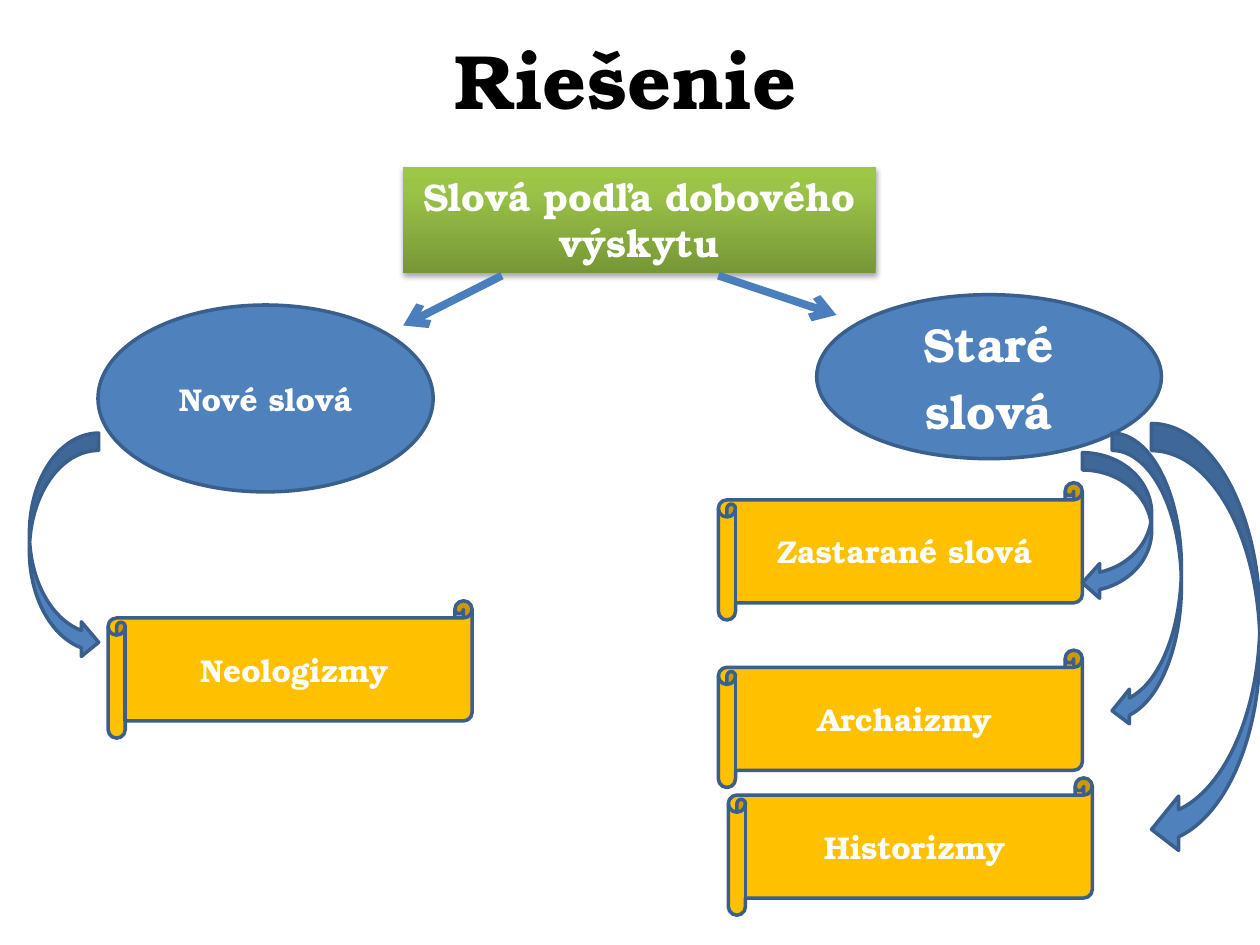
from copy import deepcopy
from dataclasses import dataclass

from lxml import etree
from pptx import Presentation
from pptx.dml.color import RGBColor
from pptx.enum.shapes import MSO_CONNECTOR, MSO_SHAPE
from pptx.enum.text import MSO_ANCHOR, PP_ALIGN
from pptx.oxml.ns import qn
from pptx.util import Pt

CENTER = PP_ALIGN.CENTER
MIDDLE, TOP = MSO_ANCHOR.MIDDLE, MSO_ANCHOR.TOP
STRAIGHT = MSO_CONNECTOR.STRAIGHT
RECT, OVAL = MSO_SHAPE.RECTANGLE, MSO_SHAPE.OVAL
SCROLL = MSO_SHAPE.HORIZONTAL_SCROLL
ARROW_RIGHT = MSO_SHAPE.CURVED_RIGHT_ARROW
ARROW_LEFT = MSO_SHAPE.CURVED_LEFT_ARROW


@dataclass(frozen=True)
class Theme:
    font: str = "TeX Gyre Bonum"
    black: str = "000000"
    white: str = "FFFFFF"
    blue: str = "4F81BD"
    outline: str = "3A5F8C"
    connector: str = "4B7EBC"
    gold: str = "FFC000"
    greens: tuple = ((0, "779737"), (0.8, "9BC348"), (1, "9DC746"))
    title_size: float = 44
    old_words_size: float = 27.2
    topic_size: float = 22
    label_size: float = 18
    outline_width: float = 2
    connector_width: float = 4.5


THEME = Theme()


@dataclass(frozen=True)
class Node:
    kind: int
    left: float
    top: float
    width: float
    height: float
    fill: str = THEME.blue
    lines: tuple = ()
    size: float = THEME.label_size


@dataclass(frozen=True)
class Line:
    x1: float
    y1: float
    x2: float
    y2: float


def scroll(text: str, left: float, top: float) -> Node:
    return Node(SCROLL, left, top, 208, 78.5, THEME.gold, (text,))


TOPIC = Node(RECT, 230.4, 95.5, 270, 60.5,
             lines=("Slová podľa dobového výskytu",), size=THEME.topic_size)
NODES = (
    Node(OVAL, 56, 174.3, 191.5, 106.8, lines=("Nové slová",)),
    Node(OVAL, 466.7, 168.4, 197, 93.7, lines=("Staré", "slová"),
         size=THEME.old_words_size),
    scroll("Neologizmy", 61.8, 343.3),
    scroll("Historizmy", 416.2, 444.5),
    scroll("Archaizmy", 410.5, 371.5),
    scroll("Zastarané slová", 410.5, 275.8),
    Node(ARROW_RIGHT, 16.8, 247.5, 39.6, 129.5),
    Node(ARROW_LEFT, 618.5, 258.7, 39.6, 84.3),
    Node(ARROW_LEFT, 635.5, 247.5, 39.6, 168.6),
    Node(ARROW_LEFT, 658, 242, 62, 247.5),
)
LINES = (Line(286.8, 157.5, 230.4, 186), Line(410.5, 157.5, 478, 180))


def rgb(color: str) -> RGBColor:
    return RGBColor.from_string(color)


def write(tf, lines: tuple, size: float, color: str, anchor) -> None:
    tf.word_wrap = True
    tf.vertical_anchor = anchor
    for i, text in enumerate(lines):
        p = tf.add_paragraph() if i else tf.paragraphs[0]
        p.text = text
        p.alignment = CENTER
        if i:
            p.space_before = Pt(size * 0.2)
        p.font.name = THEME.font
        p.font.size = Pt(size)
        p.font.bold = True
        p.font.color.rgb = rgb(color)


def add_shape(slide, node: Node, anchor=MIDDLE):
    sp = slide.shapes.add_shape(node.kind, Pt(node.left), Pt(node.top),
                                Pt(node.width), Pt(node.height))
    sp.shadow.inherit = False
    sp.fill.solid()
    sp.fill.fore_color.rgb = rgb(node.fill)
    sp.line.color.rgb = rgb(THEME.outline)
    sp.line.width = Pt(THEME.outline_width)
    if node.lines:
        write(sp.text_frame, node.lines, node.size, THEME.white, anchor)
    return sp


def add_topic(slide, node: Node) -> None:
    sp = add_shape(slide, node, TOP)
    sp.line.fill.background()
    # Three-stop gradient, dark at the bottom
    sp.fill.gradient()
    sp.fill.gradient_angle = 90
    sp_pr = sp._element.spPr
    gs_lst = sp_pr.find(".//" + qn("a:gsLst"))
    gs_lst.append(deepcopy(gs_lst[-1]))
    for stop, (position, color) in zip(sp.fill.gradient_stops, THEME.greens):
        stop.position = position
        stop.color.rgb = rgb(color)
    # Soft shadow below
    shadow = etree.SubElement(sp_pr.find(qn("a:effectLst")), qn("a:outerShdw"),
                              blurRad=str(Pt(3.1)), dist=str(Pt(1.8)),
                              dir="5400000", rotWithShape="0")
    color = etree.SubElement(shadow, qn("a:srgbClr"), val=THEME.black)
    etree.SubElement(color, qn("a:alpha"), val="35000")


def add_arrow(slide, line: Line) -> None:
    cxn = slide.shapes.add_connector(STRAIGHT, Pt(line.x1), Pt(line.y1),
                                     Pt(line.x2), Pt(line.y2))
    cxn.line.color.rgb = rgb(THEME.connector)
    cxn.line.width = Pt(THEME.connector_width)
    sp_pr = cxn._element.spPr
    etree.SubElement(sp_pr.find(qn("a:ln")), qn("a:tailEnd"), type="arrow")
    etree.SubElement(sp_pr, qn("a:effectLst"))


def main() -> None:
    prs = Presentation()
    prs.slide_width, prs.slide_height = Pt(720), Pt(540)
    slide = prs.slides.add_slide(prs.slide_layouts[6])

    # Title
    title = slide.shapes.add_textbox(Pt(33.8), Pt(0), Pt(648), Pt(90))
    write(title.text_frame, ("Riešenie",), THEME.title_size, THEME.black, MIDDLE)

    # Topic, its two branches and their word groups
    add_topic(slide, TOPIC)
    for node in NODES:
        add_shape(slide, node)
    for line in LINES:
        add_arrow(slide, line)

    prs.save("out.pptx")


if __name__ == "__main__":
    main()
